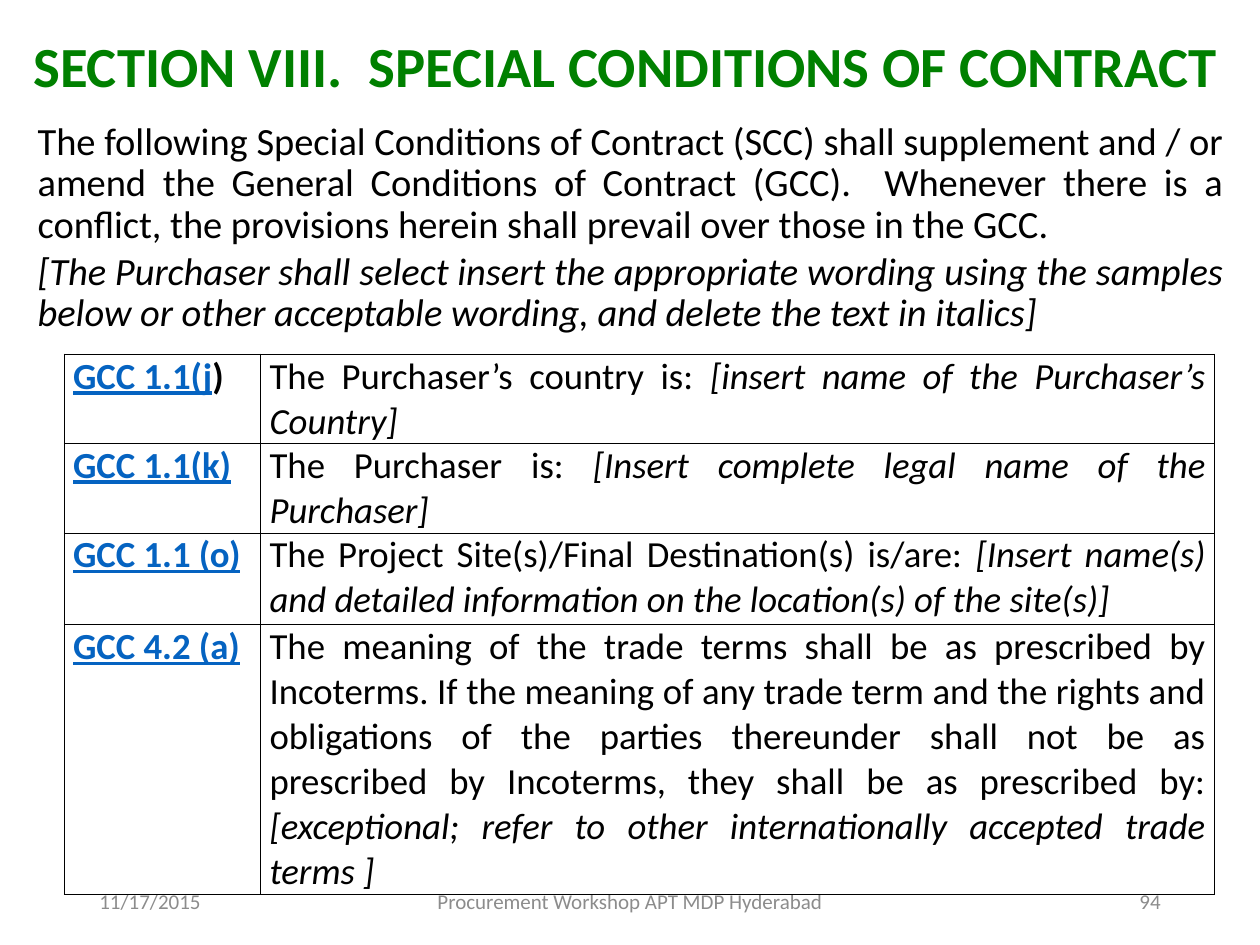
import dataclasses

import pptx
import pptx.dml.color
import pptx.enum.text
import pptx.oxml
import pptx.oxml.ns
import pptx.util

Inches = pptx.util.Inches
Pt = pptx.util.Pt
ALIGN = pptx.enum.text.PP_ALIGN
ANCHOR = pptx.enum.text.MSO_ANCHOR


@dataclasses.dataclass(frozen=True)
class Theme:
    font: str = "Calibri"
    heading: str = "008000"
    ink: str = "000000"
    link: str = "0563C1"
    muted: str = "8C8C8C"
    paper: str = "FFFFFF"
    heading_size: float = 32.4
    intro_size: float = 22
    clause_size: float = 21
    footer_size: float = 12


THEME = Theme()

INTRO = (
    "The following Special Conditions of Contract (SCC) shall supplement and / or amend "
    "the General Conditions of Contract (GCC).  Whenever there is a conflict, the "
    "provisions herein shall prevail over those in the GCC"
)
INSTRUCTION = (
    "[The Purchaser shall select insert the appropriate wording using the samples below "
    "or other acceptable wording, and delete the text in italics]"
)

# Linked reference, its unlinked ending, fixed wording, wording to be filled in
CLAUSES = [
    ("GCC 1.1(j", ")", "The Purchaser’s country is: ",
     "[insert name of the Purchaser’s Country]"),
    ("GCC 1.1(k)", "", "The Purchaser is: ",
     "[Insert complete legal name of the Purchaser]"),
    ("GCC 1.1 (o)", "", "The Project Site(s)/Final Destination(s) is/are: ",
     "[Insert name(s) and detailed information on the location(s) of the site(s)]"),
    ("GCC 4.2 (a)", "",
     "The meaning of the trade terms shall be as prescribed by Incoterms. If the meaning "
     "of any trade term and the rights and obligations of the parties thereunder shall "
     "not be as prescribed by Incoterms, they shall be as prescribed by: ",
     "[exceptional; refer to other internationally accepted trade terms ]"),
]
COLUMN_WIDTHS = [1.56, 7.57]
ROW_HEIGHTS = [0.71, 0.71, 0.73, 2.14]

FOOTER = [
    ("11/17/2015", 0.69, 2.25, ALIGN.LEFT),
    ("Procurement Workshop APT MDP Hyderabad", 3.31, 3.38, ALIGN.CENTER),
    ("94", 7.06, 2.25, ALIGN.RIGHT),
]


def write(paragraph, text, size, color=THEME.ink, bold=False, italic=False,
          underline=False):
    """Append one formatted run to the paragraph."""
    run = paragraph.add_run()
    run.text = text
    font = run.font
    font.name = THEME.font
    font.size = Pt(size)
    font.color.rgb = pptx.dml.color.RGBColor.from_string(color)
    font.bold = bold
    font.italic = italic
    font.underline = underline


def add_text_frame(slide, left, top, width, height, anchor=ANCHOR.TOP):
    box = slide.shapes.add_textbox(
        Inches(left), Inches(top), Inches(width), Inches(height))
    frame = box.text_frame
    frame.word_wrap = True
    frame.vertical_anchor = anchor
    return frame


def add_heading(slide):
    heading = add_text_frame(slide, 0.12, 0.13, 9.69, 0.71, ANCHOR.BOTTOM).paragraphs[0]
    heading.alignment = ALIGN.CENTER
    heading.line_spacing = 0.9
    write(heading, "SECTION VIII.  SPECIAL CONDITIONS OF CONTRACT",
          THEME.heading_size, color=THEME.heading, bold=True)


def add_intro(slide):
    frame = add_text_frame(slide, 0.2, 0.92, 9.61, 6.38)
    intro = frame.paragraphs[0]
    instruction = frame.add_paragraph()
    instruction.space_before = Pt(3)
    for paragraph in (intro, instruction):
        paragraph.alignment = ALIGN.JUSTIFY
        paragraph.line_spacing = 0.9
    write(intro, INTRO, THEME.intro_size)
    write(intro, ".", THEME.intro_size, italic=True)
    write(instruction, INSTRUCTION, THEME.intro_size, italic=True)


def add_footer(slide):
    for text, left, width, alignment in FOOTER:
        frame = add_text_frame(slide, left, 6.95, width, 0.4, ANCHOR.MIDDLE)
        frame.paragraphs[0].alignment = alignment
        write(frame.paragraphs[0], text, THEME.footer_size, color=THEME.muted)


def style_cell(cell):
    """Clear the fill, tighten the margins and rule all four sides."""
    cell.fill.background()
    cell.margin_left = cell.margin_right = Inches(0.07)
    cell.margin_top = cell.margin_bottom = 0
    properties = cell._tc.get_or_add_tcPr()
    for position, side in enumerate("LRTB"):
        border = pptx.oxml.parse_xml(
            f'<a:ln{side} {pptx.oxml.ns.nsdecls("a")} w="{Pt(0.5)}"><a:solidFill>'
            f'<a:srgbClr val="{THEME.ink}"/></a:solidFill></a:ln{side}>')
        properties.insert(position, border)


def add_clauses(slide):
    table = slide.shapes.add_table(
        len(CLAUSES), len(COLUMN_WIDTHS), Inches(0.51), Inches(2.81),
        Inches(sum(COLUMN_WIDTHS)), Inches(sum(ROW_HEIGHTS))).table
    table.first_row = table.horz_banding = False
    for column, width in zip(table.columns, COLUMN_WIDTHS):
        column.width = Inches(width)

    size = THEME.clause_size
    for row, height, clause in zip(table.rows, ROW_HEIGHTS, CLAUSES):
        row.height = Inches(height)
        reference, ending, wording, blank = clause
        for cell in row.cells:
            style_cell(cell)
        label, body = (cell.text_frame.paragraphs[0] for cell in row.cells)
        label.space_after = body.space_after = Pt(10)
        write(label, reference, size, color=THEME.link, bold=True, underline=True)
        if ending:
            write(label, ending, size, bold=True)
        body.alignment = ALIGN.JUSTIFY
        write(body, wording, size)
        write(body, blank, size, italic=True)


def main():
    deck = pptx.Presentation()
    deck.slide_width, deck.slide_height = Inches(10), Inches(7.5)
    slide = deck.slides.add_slide(deck.slide_layouts[6])
    background = slide.background.fill
    background.solid()
    background.fore_color.rgb = pptx.dml.color.RGBColor.from_string(THEME.paper)
    add_heading(slide)
    add_intro(slide)
    add_footer(slide)
    add_clauses(slide)
    deck.save("out.pptx")


if __name__ == "__main__":
    main()
